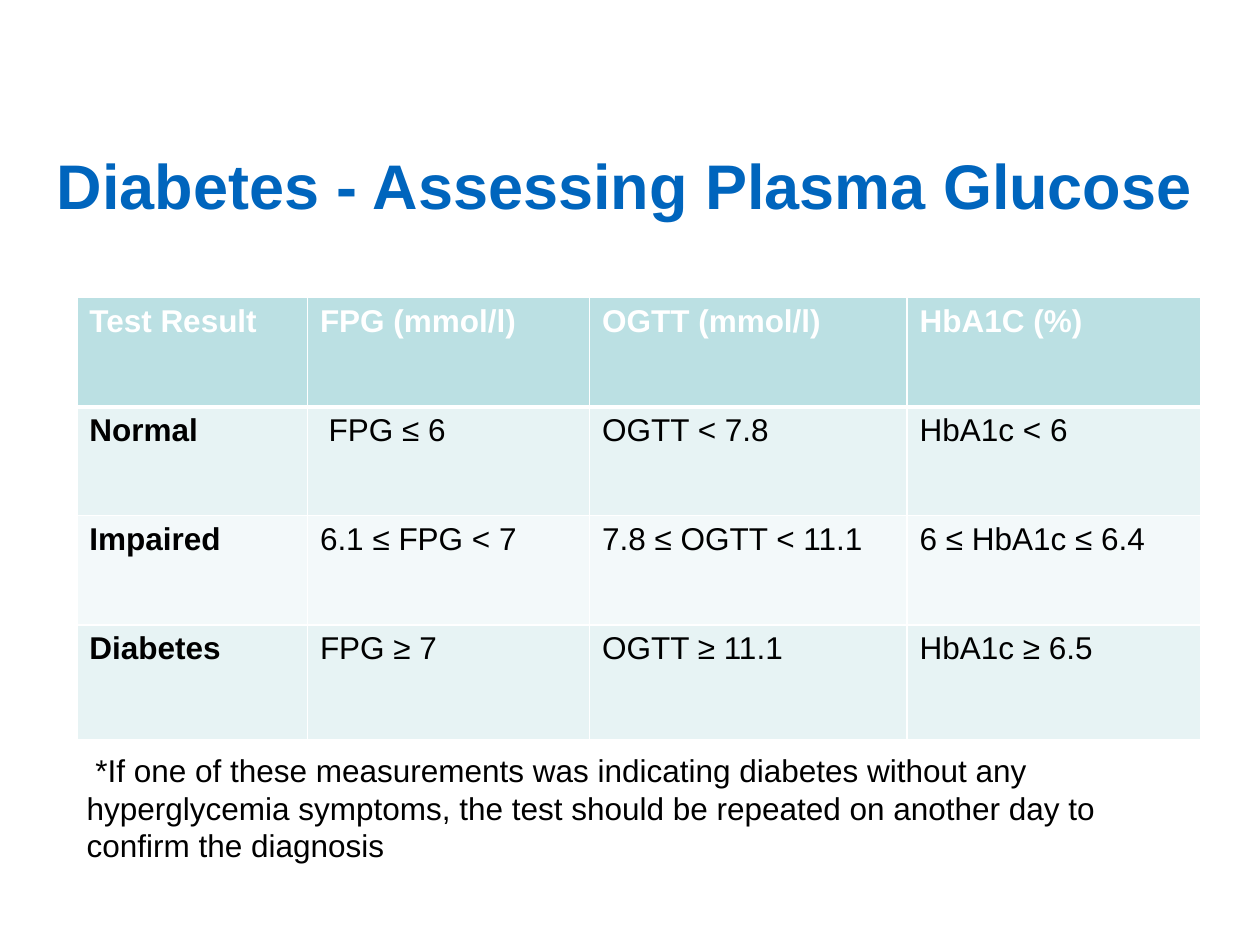
from lxml.etree import SubElement
from pptx import Presentation
from pptx.dml.color import RGBColor
from pptx.enum.text import MSO_ANCHOR, MSO_AUTO_SIZE, PP_ALIGN
from pptx.oxml.ns import qn
from pptx.util import Inches, Pt

COLORS = {
    "title": "0065BD",
    "header": "BBE0E3",
    "odd_row": "E7F3F4",
    "even_row": "F3F9FA",
    "white": "FFFFFF",
    "text": "000000",
}

COLUMN_WIDTHS = [1.83, 2.24, 2.52, 2.33]
ROW_HEIGHTS = [0.87, 0.86, 0.87, 0.91]
RESULTS = [
    ["Test Result", "FPG (mmol/l)", "OGTT (mmol/l)", "HbA1C (%)"],
    ["Normal", " FPG ≤ 6", "OGTT < 7.8", "HbA1c < 6"],
    ["Impaired", "6.1 ≤ FPG < 7", "7.8 ≤ OGTT < 11.1", "6 ≤ HbA1c ≤ 6.4"],
    ["Diabetes", "FPG ≥ 7", "OGTT ≥ 11.1", "HbA1c ≥ 6.5"],
]
FOOTNOTE = (
    " *If one of these measurements was indicating diabetes without any "
    "hyperglycemia symptoms, the test should be repeated on another day to "
    "confirm the diagnosis"
)


def write(frame, text, color, size=18, bold=False):
    paragraph = frame.paragraphs[0]
    run = paragraph.add_run()
    run.text = text
    formats = {"name": "Arial", "size": Pt(size), "bold": bold}
    for attribute, value in formats.items():
        setattr(run.font, attribute, value)
    run.font.color.rgb = RGBColor.from_string(COLORS[color])
    return paragraph


def set_borders(cell, widths):
    properties = cell._tc.get_or_add_tcPr()
    for side, width in widths.items():
        line = SubElement(properties, qn(f"a:ln{side}"), w=str(Pt(width)))
        fill = SubElement(line, qn("a:solidFill"))
        SubElement(fill, qn("a:srgbClr"), val=COLORS["white"])


def add_title(slide, left, top, width, height):
    title = slide.shapes.title
    box = {"left": left, "top": top, "width": width, "height": height}
    for attribute, value in box.items():
        setattr(title, attribute, Inches(value))
    frame = title.text_frame
    frame.auto_size = MSO_AUTO_SIZE.NONE
    frame.vertical_anchor = MSO_ANCHOR.MIDDLE
    heading = write(frame, "Diabetes - Assessing Plasma Glucose", "title", 36, True)
    heading.alignment = PP_ALIGN.LEFT
    # Hanging indent
    indent = Inches(0.49)
    properties = heading._p.get_or_add_pPr()
    properties.set("marL", str(indent))
    properties.set("indent", str(-indent))


def add_results_table(slide, left, top, width, height):
    table = slide.shapes.add_table(
        len(RESULTS), len(COLUMN_WIDTHS),
        Inches(left), Inches(top), Inches(width), Inches(height),
    ).table
    for column, column_width in zip(table.columns, COLUMN_WIDTHS):
        column.width = Inches(column_width)
    for row, row_height in zip(table.rows, ROW_HEIGHTS):
        row.height = Inches(row_height)

    for r, result in enumerate(RESULTS):
        is_header = r == 0
        fill = "header" if is_header else "odd_row" if r % 2 else "even_row"
        for c, text in enumerate(result):
            cell = table.cell(r, c)
            set_borders(cell, {"L": 1, "R": 1, "T": 1, "B": 3 if is_header else 1})
            cell.fill.solid()
            cell.fill.fore_color.rgb = RGBColor.from_string(COLORS[fill])
            write(cell.text_frame, text, "white" if is_header else "text",
                  bold=is_header or c == 0)


def add_footnote(slide, left, top, width, height):
    footnote = slide.shapes.add_textbox(
        Inches(left), Inches(top), Inches(width), Inches(height))
    frame = footnote.text_frame
    frame.word_wrap = True
    frame.auto_size = MSO_AUTO_SIZE.SHAPE_TO_FIT_TEXT
    write(frame, FOOTNOTE, "text")


def main():
    presentation = Presentation()
    presentation.slide_width = Inches(10)
    presentation.slide_height = Inches(7.5)
    slide = presentation.slides.add_slide(
        presentation.slide_layouts.get_by_name("Title Only"))

    add_title(slide, 0.35, 0.84, 9.44, 1.25)
    add_results_table(slide, 0.61, 2.36, sum(COLUMN_WIDTHS), sum(ROW_HEIGHTS))
    add_footnote(slide, 0.59, 5.91, 8.83, 1.01)

    presentation.save("out.pptx")


if __name__ == "__main__":
    main()
